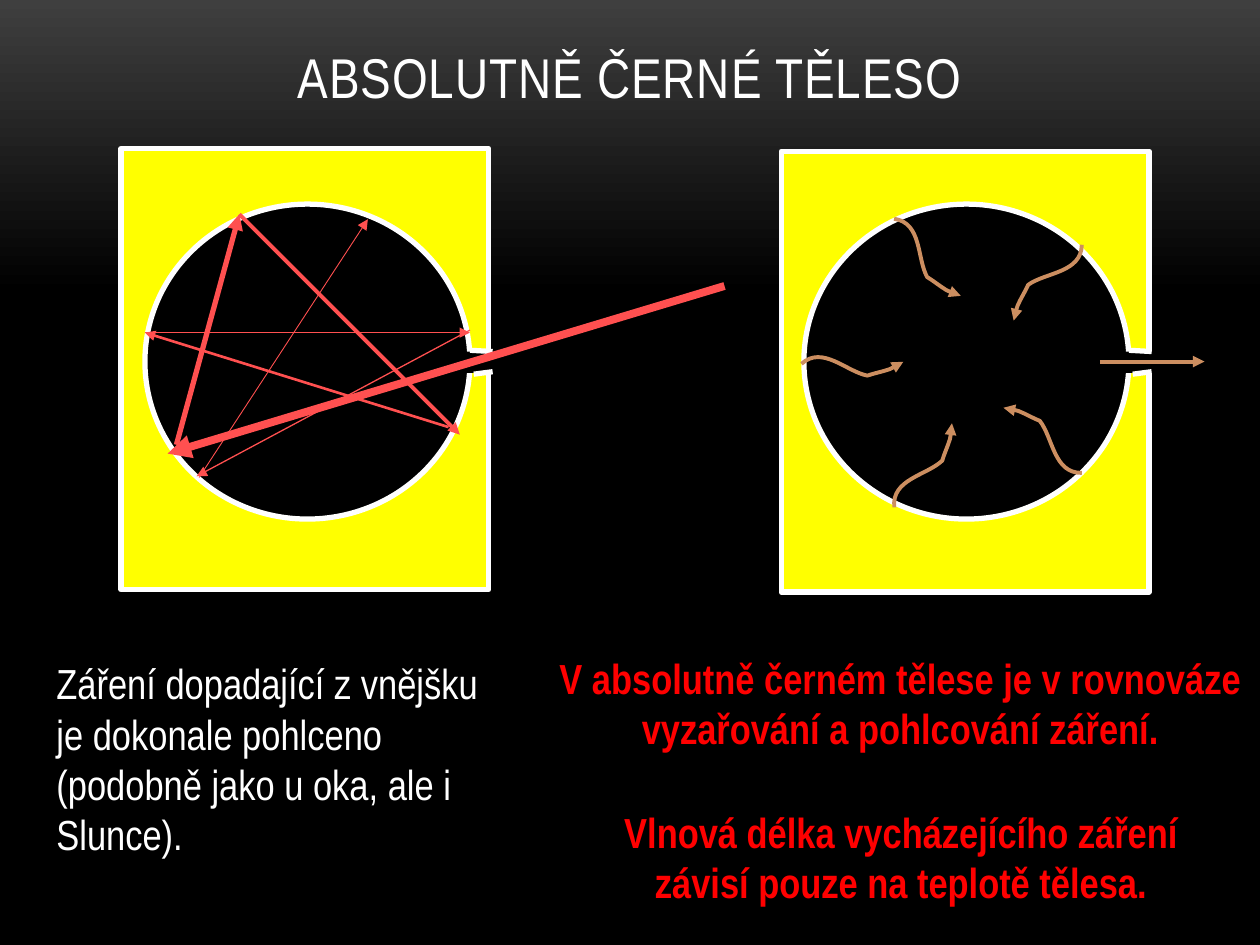
from typing import NamedTuple

from lxml import etree
from pptx import Presentation
from pptx.dml.color import RGBColor
from pptx.enum import shapes, text
from pptx.oxml import ns
from pptx.util import Inches, Pt

FONT = "Arial Narrow"
WHITE, BLACK, YELLOW, RED = "FFFFFF", "000000", "FFFF00", "FF0000"
RAY, WAVE = "FF5050", "CC8E60"


class Cavity(NamedTuple):
    dx: float
    frame_x: float
    frame_y: float


class Line(NamedTuple):
    x1: float
    y1: float
    x2: float
    y2: float
    width: float


class Wave(NamedTuple):
    cx: float
    cy: float
    rotation: float


CAVITIES = [Cavity(0, 0.96, 1.18), Cavity(5.23, 6.2, 1.2)]
OPENING_EDGES = [Line(3.73, 2.78, 3.91, 2.79, 3), Line(3.76, 2.97, 3.91, 2.95, 3)]

# The ray weakens with every reflection
RAYS = [
    Line(5.75, 2.27, 1.33, 3.6, 4.5),
    Line(1.4, 3.53, 1.9, 1.7, 3),
    Line(1.9, 1.7, 3.65, 3.45, 2.25),
    Line(3.56, 3.39, 1.15, 2.64, 1.5),
    Line(1.15, 2.64, 3.73, 2.64, 1),
    Line(3.73, 2.62, 1.56, 3.78, 0.75),
    Line(1.58, 3.79, 2.92, 1.74, 0.5),
]
ESCAPING = Line(8.73, 2.87, 9.56, 2.87, 2.25)

# Start point, then three Bézier segments, relative to the wave's centre
WAVE_POINTS = [
    (-0.4, -0.03),
    (-0.21, -0.15), (-0.06, 0.09), (0.1, 0.15),
    (0.16, 0.14), (0.22, 0.14), (0.28, 0.13),
    (0.32, 0.12), (0.4, 0.09), (0.4, 0.09),
]
WAVES = [
    Wave(6.76, 2.85, 350.3),
    Wave(7.38, 2.02, 40.6),
    Wave(7.3, 3.68, 295.9),
    Wave(8.34, 2.26, 123.4),
    Wave(8.26, 3.52, 211.2),
]


def rgb(color: str) -> RGBColor:
    return RGBColor.from_string(color)


def set_line(line, color: str, width: float, arrow: bool = False) -> None:
    line.color.rgb = rgb(color)
    line.width = Pt(width)
    if arrow:
        ln = line._get_or_add_ln()
        etree.SubElement(ln, ns.qn("a:tailEnd"), type="triangle")


def add_shape(s, kind, x, y, w, h, fill: str, outlined: bool = True) -> None:
    sp = s.shapes.add_shape(kind, Inches(x), Inches(y), Inches(w), Inches(h))
    sp.shadow.inherit = False
    sp.fill.solid()
    sp.fill.fore_color.rgb = rgb(fill)
    if outlined:
        set_line(sp.line, WHITE, 3)
    else:
        sp.line.fill.background()


def add_line(s, ln: Line, color: str, dx: float = 0, arrow: bool = False) -> None:
    c = s.shapes.add_connector(
        shapes.MSO_CONNECTOR.STRAIGHT,
        Inches(ln.x1 + dx), Inches(ln.y1), Inches(ln.x2 + dx), Inches(ln.y2))
    set_line(c.line, color, ln.width, arrow)
    etree.SubElement(c._element.spPr, ns.qn("a:effectLst"))


def add_cavity(s, c: Cavity) -> None:
    kind = shapes.MSO_SHAPE
    add_shape(s, kind.RECTANGLE, c.frame_x, c.frame_y, 2.92, 3.5, YELLOW)
    add_shape(s, kind.OVAL, 1.15 + c.dx, 1.62, 2.58, 2.5, BLACK)
    add_shape(s, kind.RECTANGLE, 3.67 + c.dx, 2.79, 0.25, 0.17, BLACK, outlined=False)
    for edge in OPENING_EDGES:
        add_line(s, edge, WHITE, c.dx)


def add_wave(s, wave: Wave) -> None:
    points = [(Inches(wave.cx + x), Inches(wave.cy + y)) for x, y in WAVE_POINTS]
    builder = s.shapes.build_freeform(*points[0])
    builder.add_line_segments(points[1:], close=False)
    sp = builder.convert_to_shape()
    # Regroup every three straight segments into one cubic curve
    segments = list(sp._element.iter(ns.qn("a:lnTo")))
    outline = segments[0].getparent()
    for i in range(0, len(segments), 3):
        curve = etree.SubElement(outline, ns.qn("a:cubicBezTo"))
        for segment in segments[i:i + 3]:
            curve.append(segment[0])
            outline.remove(segment)
    sp.rotation = wave.rotation
    sp.shadow.inherit = False
    sp.fill.background()
    set_line(sp.line, WAVE, 2.25, arrow=True)


def add_text(s, content: str, x, y, w, h, *, size=24, color=WHITE, bold=False,
             align=text.PP_ALIGN.LEFT, anchor=text.MSO_ANCHOR.TOP, spacing=0) -> None:
    tf = s.shapes.add_textbox(Inches(x), Inches(y), Inches(w), Inches(h)).text_frame
    tf.word_wrap = True
    tf.vertical_anchor = anchor
    p = tf.paragraphs[0]
    p.alignment = align
    r = p.add_run()
    r.text = content
    r.font.name, r.font.size, r.font.bold = FONT, Pt(size), bold
    r.font.color.rgb = rgb(color)
    if spacing:
        r.font._element.set("spc", str(round(spacing * 100)))


def main() -> None:
    prs = Presentation()
    prs.slide_width, prs.slide_height = Inches(10), Inches(7.5)
    s = prs.slides.add_slide(prs.slide_layouts[6])

    # Background: grey fading to black
    fill = s.background.fill
    fill.gradient()
    fill.gradient_angle = 270
    for stop, (position, color) in zip(fill.gradient_stops, [(0, "3F3F3F"), (0.31, BLACK)]):
        stop.position = position
        stop.color.rgb = rgb(color)

    center = text.PP_ALIGN.CENTER
    add_text(s, "ABSOLUTNĚ ČERNÉ TĚLESO", 0, 0.03, 10, 0.89, size=32,
             align=center, anchor=text.MSO_ANCHOR.BOTTOM, spacing=0.5)

    # Absorbing and radiating cavities
    for cavity in CAVITIES:
        add_cavity(s, cavity)
    for ray in RAYS:
        add_line(s, ray, RAY, arrow=True)
    for wave in WAVES:
        add_wave(s, wave)
    add_line(s, ESCAPING, WAVE, arrow=True)

    # Explanations
    add_text(s, "Záření dopadající z vnějšku je dokonale pohlceno "
             "(podobně jako u oka, ale i Slunce).", 0.35, 5.17, 3.57, 1.72)
    add_text(s, "Vlnová délka vycházejícího záření závisí pouze na teplotě tělesa.",
             4.46, 6.35, 5.38, 0.91, color=RED, bold=True, align=center)
    add_text(s, "V absolutně černém tělese je v rovnováze vyzařování a pohlcování záření.",
             4.28, 5.13, 5.73, 0.91, color=RED, bold=True, align=center)

    prs.save("out.pptx")


if __name__ == "__main__":
    main()
